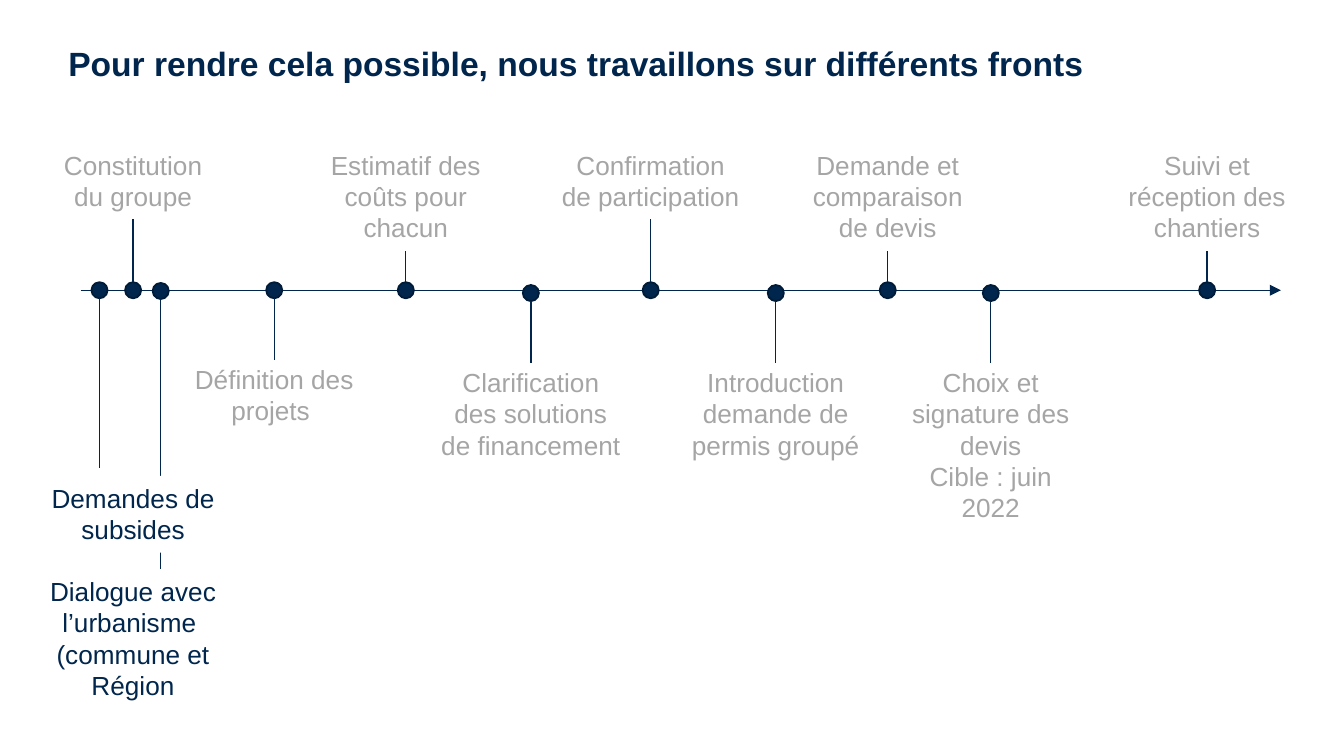
from dataclasses import dataclass

import pptx
import pptx.dml.color
import pptx.enum.dml
import pptx.enum.shapes
import pptx.enum.text
import pptx.oxml
import pptx.oxml.ns
import pptx.util
from pptx.util import Pt

SHAPE = pptx.enum.shapes.MSO_SHAPE
ALIGN = pptx.enum.text.PP_ALIGN
ANCHOR = pptx.enum.text.MSO_ANCHOR
AUTO_SIZE = pptx.enum.text.MSO_AUTO_SIZE


@dataclass(frozen=True)
class Theme:
    font: str = "Arial"
    title_size: float = 18
    label_size: float = 14
    line_height: float = 17
    navy: str = "00264D"
    dot_edge: str = "001B38"
    grey: str = "A5A5A5"
    white: str = "FFFFFF"
    line: float = 0.75
    dot_line: float = 1
    dot: float = 8.6


THEME = Theme()
NARROW, WIDE, WIDEST = 102.2, 113, 136
DROP = 1.5  # some dots sit slightly under the axis

# Centre along the axis, label width, label lines, offset of the dot, paragraphs
ABOVE = [
    (28.1, NARROW, 2, ["Constitution du groupe"]),
    (174.2, NARROW, 3, ["Estimatif des coûts pour chacun"]),
    (305.4, WIDE, 2, ["Confirmation de participation "]),
    (432.4, WIDE, 3, ["Demande et comparaison de devis"]),
    (603.5, WIDE, 3, ["Suivi et réception des chantiers"]),
]
BELOW = [
    (103.7, NARROW, 2, 0, ["Définition des projets "]),
    (241.2, WIDE, 4, DROP, ["Clarification des solutions de financement"]),
    (372.4, WIDE, 3, DROP, ["Introduction demande de permis groupé"]),
    (487.6, WIDE, 4, DROP, ["Choix et signature des devis", "Cible : juin 2022"]),
]


def rgb(value):
    return pptx.dml.color.RGBColor.from_string(value)


def write(shape, paragraphs, size, color, align, bold=False):
    frame = shape.text_frame
    frame.word_wrap = True
    for index, text in enumerate(paragraphs):
        paragraph = frame.add_paragraph() if index else frame.paragraphs[0]
        paragraph.text = text
        paragraph.alignment = align
        paragraph.font.name = THEME.font
        paragraph.font.size = Pt(size)
        paragraph.font.bold = bold
        paragraph.font.color.rgb = rgb(color)
    return frame


def add_label(slide, center, top, width, lines, paragraphs, color, masked=False):
    """Centred label; a masked one hides the stem passing behind it."""
    box = (Pt(center - width / 2), Pt(top), Pt(width), Pt(7.2 + lines * THEME.line_height))
    if masked:
        label = slide.shapes.add_shape(SHAPE.RECTANGLE, *box)
        label.shadow.inherit = False
        label.fill.solid()
        label.fill.fore_color.rgb = rgb(THEME.white)
        label.line.fill.background()
    else:
        label = slide.shapes.add_textbox(*box)
    frame = write(label, paragraphs, THEME.label_size, color, ALIGN.CENTER)
    frame.vertical_anchor = ANCHOR.TOP
    frame.auto_size = AUTO_SIZE.SHAPE_TO_FIT_TEXT
    return label


def add_line(slide, x1, y1, x2, y2):
    line = slide.shapes.add_connector(
        pptx.enum.shapes.MSO_CONNECTOR.STRAIGHT, Pt(x1), Pt(y1), Pt(x2), Pt(y2))
    line.line.color.rgb = rgb(THEME.navy)
    line.line.width = Pt(THEME.line)
    line._element.spPr.append(pptx.oxml.parse_xml(
        f'<a:effectLst {pptx.oxml.ns.nsdecls("a")}/>'))
    return line


def add_dot(slide, x, y):
    radius = THEME.dot / 2
    dot = slide.shapes.add_shape(
        SHAPE.OVAL, Pt(x - radius), Pt(y - radius), Pt(THEME.dot), Pt(THEME.dot))
    dot.shadow.inherit = False
    dot.fill.solid()
    dot.fill.fore_color.rgb = rgb(THEME.navy)
    dot.line.color.rgb = rgb(THEME.dot_edge)
    dot.line.width = Pt(THEME.dot_line)
    return dot


def add_title(slide, left, top, width, height):
    title = slide.shapes.add_textbox(Pt(left), Pt(top), Pt(width), Pt(height))
    frame = write(
        title, ["Pour rendre cela possible, nous travaillons sur différents fronts"],
        THEME.title_size, THEME.navy, ALIGN.LEFT, bold=True)
    frame.vertical_anchor = ANCHOR.MIDDLE
    frame.paragraphs[0].line_spacing = 0.9


def add_timeline(slide, left, top, width):
    axis_y = top + 79.2
    radius = THEME.dot / 2

    # Axis with its arrowhead
    axis = add_line(slide, left, axis_y, left + width, axis_y)
    axis.line._get_or_add_ln().append(pptx.oxml.parse_xml(
        f'<a:tailEnd {pptx.oxml.ns.nsdecls("a")} type="triangle"/>'))

    # Steps above the axis
    for offset, label_width, lines, paragraphs in ABOVE:
        x = left + offset
        dot = add_dot(slide, x, axis_y)
        label = add_label(slide, x, top, label_width, lines, paragraphs, THEME.grey)
        stem = add_line(slide, x, top, x, axis_y - radius)
        stem.begin_connect(label, 2)
        stem.end_connect(dot, 0)

    # Steps below the axis
    for offset, label_width, lines, drop, paragraphs in BELOW:
        x, y = left + offset, axis_y + drop
        add_dot(slide, x, y)
        add_label(slide, x, y + 35.6, label_width, lines, paragraphs, THEME.grey)
        add_line(slide, x, y + radius, x, y + 37.4)

    # Current steps, stacked under the start of the axis
    subsidies_x, dialogue_x, stack_x = left + 10.1, left + 42.9, left + 28.1
    dialogue_top = top + 228.3
    add_dot(slide, subsidies_x, axis_y)
    add_line(slide, subsidies_x, axis_y + radius, subsidies_x, top + 174.3)
    add_label(slide, stack_x, dialogue_top, WIDEST, 4,
              ["Dialogue avec l’urbanisme \n(commune et Région"], THEME.navy)
    add_dot(slide, dialogue_x, axis_y + 0.4)
    add_line(slide, dialogue_x, axis_y + radius, dialogue_x, dialogue_top)
    add_label(slide, stack_x, top + 178.6, NARROW, 2,
              ["Demandes de subsides"], THEME.navy, masked=True)


def main():
    deck = pptx.Presentation()
    deck.slide_width, deck.slide_height = Pt(720), Pt(405)
    slide = deck.slides.add_slide(deck.slide_layouts[6])
    add_title(slide, 29.5, 22.3, 661, 25.2)
    add_timeline(slide, 43.2, 76.3, 643)
    deck.save("out.pptx")


if __name__ == "__main__":
    main()
